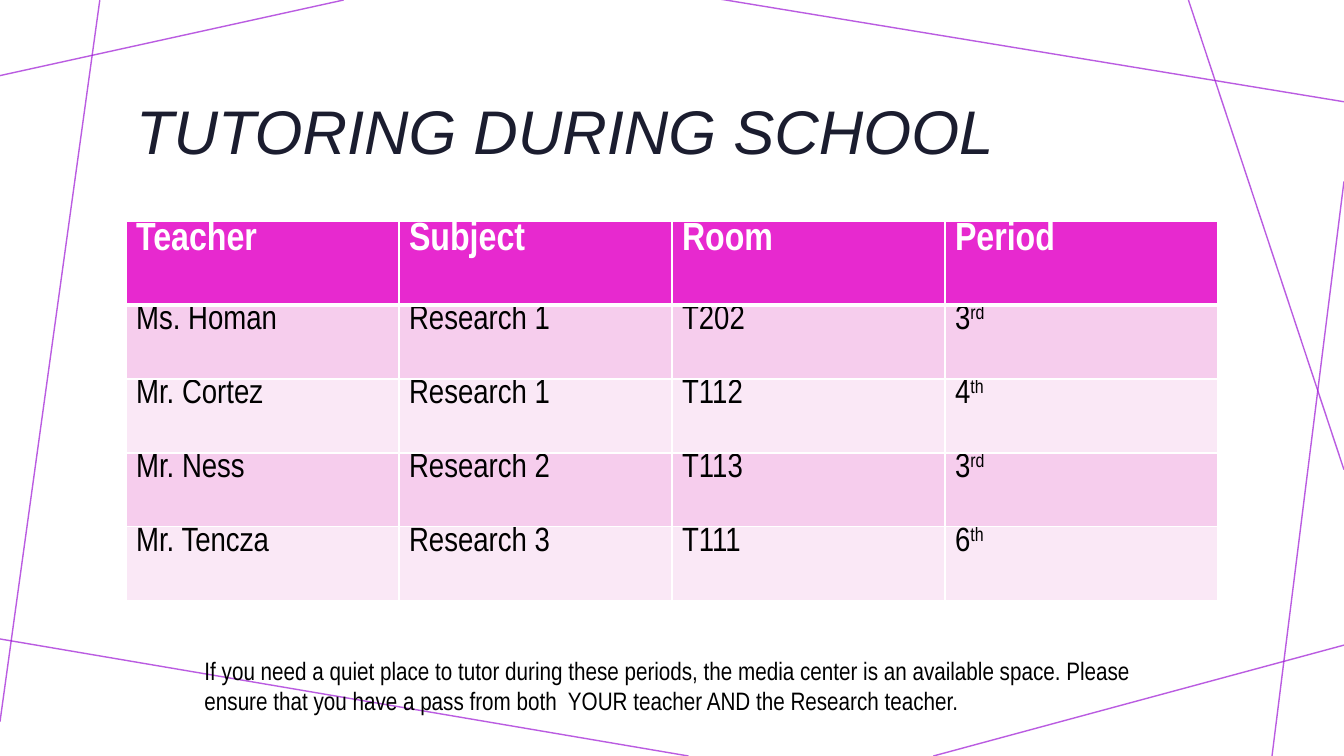
import pptx
import pptx.dml.color
import pptx.enum.shapes
import pptx.enum.text
import pptx.oxml.ns
import pptx.oxml.xmlchemy
import pptx.util

COLORS = {
    "background": "FFFFFF", "accent_line": "9D17D5", "title": "1B1D2F",
    "header": "E729CF", "band_dark": "F6CDED", "band_light": "FAE8F6",
    "white": "FFFFFF", "black": "000000",
}
ACCENT_LINES = [
    ((245.5, 0), (0, 54)),
    ((71.3, 0), (0, 515.5)),
    ((491.8, 540), (-3.6, 455.8)),
    ((960, 460.8), (666.7, 540)),
    ((960, 129.6), (908.6, 540)),
    ((960, 335.5), (848.9, 0)),
    ((960, 72.7), (514.1, -0.7)),
]
# Each cell is text, or a pair of text and superscript
TUTORING_ROWS = [
    ["Teacher", "Subject", "Room", "Period"],
    ["Ms. Homan", "Research 1", "T202", ("3", "rd")],
    ["Mr. Cortez", "Research 1", "T112", ("4", "th")],
    ["Mr. Ness", "Research 2", "T113", ("3", "rd")],
    ["Mr. Tencza", "Research 3", "T111", ("6", "th")],
]
NOTE = ("If you need a quiet place to tutor during these periods, the media center "
        "is an available space. Please ensure that you have a pass from both  YOUR "
        "teacher AND the Research teacher.")


def color(name):
    return pptx.dml.color.RGBColor.from_string(COLORS[name])


def add_text(paragraph, text, font="Arial Narrow", size=18, color_name="black",
             bold=False, italic=False, baseline=0):
    run = paragraph.add_run()
    run.text = text
    run.font.name = font
    run.font.size = pptx.util.Pt(size)
    run.font.color.rgb = color(color_name)
    run.font.bold = bold
    run.font.italic = italic
    if baseline:
        run.font._element.set("baseline", str(baseline * 1000))


class SlideBuilder:
    def __init__(self, presentation):
        self.slide = presentation.slides.add_slide(presentation.slide_layouts[5])
        background = self.slide.background.fill
        background.solid()
        background.fore_color.rgb = color("background")

    def line(self, start, end, width=1, opacity=70):
        points = [pptx.util.Pt(value) for value in (*start, *end)]
        connector = self.slide.shapes.add_connector(
            pptx.enum.shapes.MSO_CONNECTOR.STRAIGHT, *points)
        connector.line.width = pptx.util.Pt(width)
        connector.line.color.rgb = color("accent_line")
        properties = connector._element.spPr
        solid_color = properties.find(".//" + pptx.oxml.ns.qn("a:srgbClr"))
        alpha = pptx.oxml.xmlchemy.OxmlElement("a:alpha")
        alpha.set("val", str(opacity * 1000))
        solid_color.append(alpha)
        properties.append(pptx.oxml.xmlchemy.OxmlElement("a:effectLst"))

    def title(self, text, left, top, width, height):
        shape = self.slide.shapes.title
        shape.left, shape.top, shape.width, shape.height = (
            pptx.util.Pt(value) for value in (left, top, width, height))
        # Bring the title in front of the accent lines
        self.slide.shapes._spTree.append(shape._element)
        frame = shape.text_frame
        frame.auto_size = pptx.enum.text.MSO_AUTO_SIZE.NONE
        frame.vertical_anchor = pptx.enum.text.MSO_ANCHOR.MIDDLE
        paragraph = frame.paragraphs[0]
        paragraph.alignment = pptx.enum.text.PP_ALIGN.LEFT
        paragraph.line_spacing = 0.9
        add_text(paragraph, text, font="Arial", size=44, color_name="title", italic=True)

    def cell_borders(self, cell, widths):
        properties = cell._tc.get_or_add_tcPr()
        for side, width in widths.items():
            border = pptx.oxml.xmlchemy.OxmlElement("a:ln" + side)
            border.set("w", str(int(pptx.util.Pt(width))))
            fill = pptx.oxml.xmlchemy.OxmlElement("a:solidFill")
            border_color = pptx.oxml.xmlchemy.OxmlElement("a:srgbClr")
            border_color.set("val", COLORS["white"])
            fill.append(border_color)
            border.append(fill)
            properties.append(border)

    def table(self, rows, left, top, width, header_height, row_height):
        heights = [header_height] + [row_height] * (len(rows) - 1)
        table = self.slide.shapes.add_table(
            len(rows), len(rows[0]), pptx.util.Pt(left), pptx.util.Pt(top),
            pptx.util.Pt(width), pptx.util.Pt(sum(heights))).table
        for column in table.columns:
            column.width = pptx.util.Pt(width / len(rows[0]))
        for row_index, values in enumerate(rows):
            table.rows[row_index].height = pptx.util.Pt(heights[row_index])
            is_header = row_index == 0
            band = "band_dark" if row_index % 2 else "band_light"
            for column_index, value in enumerate(values):
                cell = table.cell(row_index, column_index)
                cell.margin_top = cell.margin_bottom = 0
                self.cell_borders(cell, {"L": 1, "R": 1, "T": 3 if row_index == 1 else 1,
                                         "B": 3 if is_header else 1})
                cell.fill.solid()
                cell.fill.fore_color.rgb = color("header" if is_header else band)
                text, superscript = value if isinstance(value, tuple) else (value, "")
                style = {"size": 28 if is_header else 24, "bold": is_header,
                         "color_name": "white" if is_header else "black"}
                paragraph = cell.text_frame.paragraphs[0]
                add_text(paragraph, text, **style)
                if superscript:
                    add_text(paragraph, superscript, baseline=30, **style)

    def text_box(self, text, left, top, width, height):
        frame = self.slide.shapes.add_textbox(
            *(pptx.util.Pt(value) for value in (left, top, width, height))).text_frame
        frame.word_wrap = True
        add_text(frame.paragraphs[0], text)


def main():
    presentation = pptx.Presentation()
    presentation.slide_width = pptx.util.Pt(960)
    presentation.slide_height = pptx.util.Pt(540)
    builder = SlideBuilder(presentation)

    # Background lines
    for start, end in ACCENT_LINES:
        builder.line(start, end)

    # Title, timetable and note
    builder.title("TUTORING DURING SCHOOL", 90, 41.8, 780, 108.7)
    builder.table(TUTORING_ROWS, 90, 158.4, 780, header_height=59.6, row_height=52.8)
    builder.text_box(NOTE, 139, 464.4, 676, 51)

    presentation.save("out.pptx")


if __name__ == "__main__":
    main()
